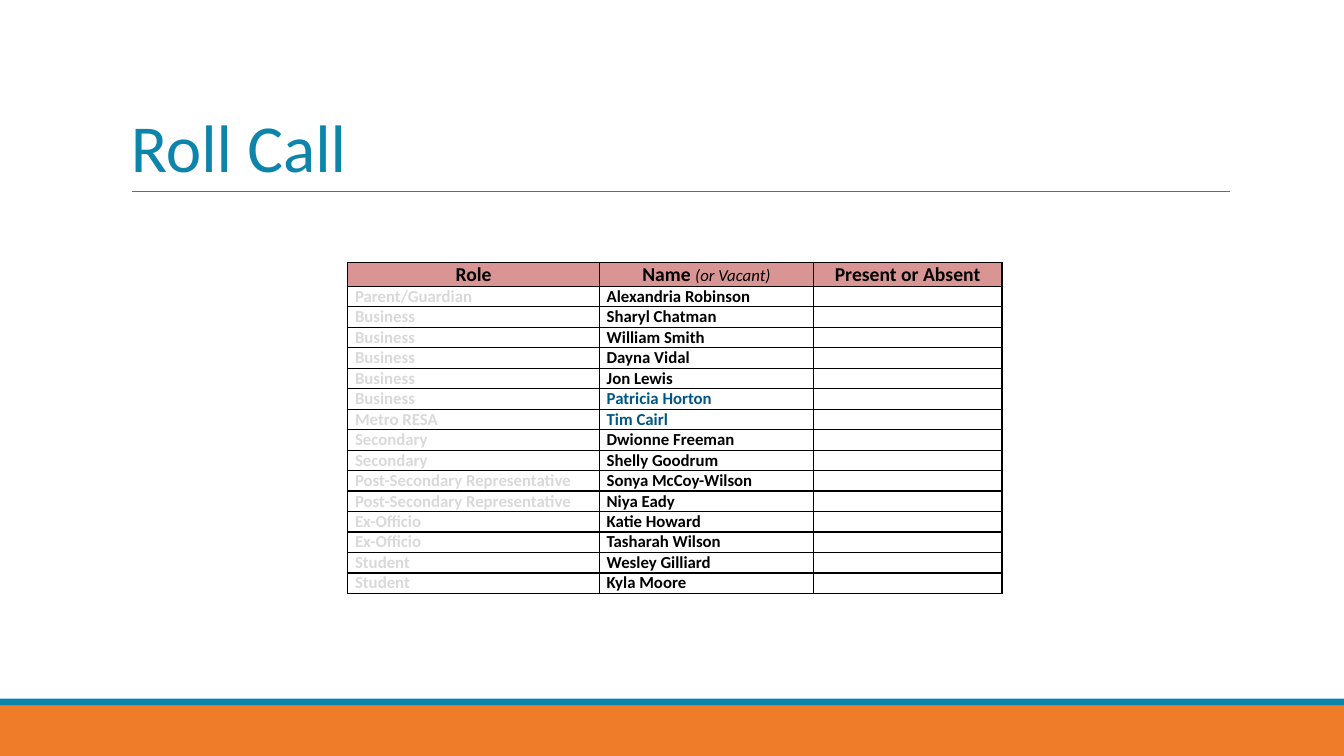
from lxml import etree
from pptx import Presentation
from pptx.dml.color import RGBColor
from pptx.enum import shapes, text
from pptx.oxml.ns import qn
from pptx.util import Pt

TITLE = "Roll Call"
HEADERS = [("Role", ""), ("Name ", "(or Vacant)"), ("Present or Absent", "")]
MEMBERS = [
    ("Parent/Guardian", "Alexandria Robinson"),
    ("Business", "Sharyl Chatman"),
    ("Business", "William Smith"),
    ("Business", "Dayna Vidal"),
    ("Business", "Jon Lewis"),
    ("Business", "Patricia Horton"),
    ("Metro RESA", "Tim Cairl"),
    ("Secondary", "Dwionne Freeman"),
    ("Secondary", "Shelly Goodrum"),
    ("Post-Secondary Representative", "Sonya McCoy-Wilson"),
    ("Post-Secondary Representative", "Niya Eady"),
    ("Ex-Officio", "Katie Howard"),
    ("Ex-Officio", "Tasharah Wilson"),
    ("Student", "Wesley Gilliard"),
    ("Student", "Kyla Moore"),
]
HIGHLIGHTED = {"Patricia Horton", "Tim Cairl"}
COLORS = {
    "orange": "EE7C29", "teal": "0D85AB", "rule": "6A6A6A", "header": "D99594",
    "black": "000000", "role": "D9D9D9", "highlight": "005685",
}
FONT = "Calibri"
SLIDE_W, SLIDE_H = 960, 540
BANDS = [("orange", 504, 36), ("teal", 499, 5)]
TABLE_X, TABLE_Y = 248.4, 187.4
COL_WIDTHS = [179.8, 152.8, 134.8]
HEADER_H, ROW_H = 17.1, 14.65


def rgb(name):
    return RGBColor.from_string(COLORS[name])


def style(font, size, color, bold=False):
    font.name, font.size, font.bold = FONT, Pt(size), bold
    font.color.rgb = rgb(color)


def add_borders(cell):
    tc_pr = cell._tc.get_or_add_tcPr()
    for i, side in enumerate(("lnL", "lnR", "lnT", "lnB")):
        ln = etree.Element(qn(f"a:{side}"), w=str(Pt(1)))
        fill = etree.SubElement(ln, qn("a:solidFill"))
        etree.SubElement(fill, qn("a:srgbClr"), val=COLORS["black"])
        tc_pr.insert(i, ln)


def fill_cell(cell, content, size, color):
    cell.margin_left = cell.margin_right = Pt(5.2)
    cell.margin_top = cell.margin_bottom = 0
    p = cell.text_frame.paragraphs[0]
    if content:
        p.add_run().text = content
        style(p.font, size, color, True)
    else:
        etree.SubElement(p._p, qn("a:endParaRPr"), sz=str(size * 100))
    return p


prs = Presentation()
prs.slide_width, prs.slide_height = Pt(SLIDE_W), Pt(SLIDE_H)
s = prs.slides.add_slide(prs.slide_layouts[6])

for color, top, height in BANDS:
    sp = s.shapes.add_shape(shapes.MSO_SHAPE.RECTANGLE, 0, Pt(top), Pt(SLIDE_W), Pt(height))
    sp.shadow.inherit = False
    sp.fill.solid()
    sp.fill.fore_color.rgb = rgb(color)
    sp.line.fill.background()

rule = s.shapes.add_connector(shapes.MSO_CONNECTOR.STRAIGHT, Pt(94.3), Pt(136.6), Pt(878.8), Pt(136.6))
rule.line.color.rgb = rgb("rule")
rule.line.width = Pt(0.75)
etree.SubElement(rule._element.spPr, qn("a:effectLst"))

tf = s.shapes.add_textbox(Pt(86.4), Pt(22.4), Pt(792), Pt(114.4)).text_frame
tf.word_wrap = True
tf.vertical_anchor = text.MSO_ANCHOR.BOTTOM
p = tf.paragraphs[0]
p.add_run().text = TITLE
p.line_spacing = 0.85
style(p.font, 48, "teal")

table = s.shapes.add_table(
    len(MEMBERS) + 1, len(HEADERS), Pt(TABLE_X), Pt(TABLE_Y),
    Pt(sum(COL_WIDTHS)), Pt(HEADER_H + ROW_H * len(MEMBERS)),
).table
for col, width in zip(table.columns, COL_WIDTHS):
    col.width = Pt(width)
for i, row in enumerate(table.rows):
    row.height = Pt(ROW_H if i else HEADER_H)

for c, (label, note) in enumerate(HEADERS):
    cell = table.cell(0, c)
    p = fill_cell(cell, label, 14, "black")
    p.alignment = text.PP_ALIGN.CENTER
    cell.vertical_anchor = text.MSO_ANCHOR.MIDDLE
    if note:
        r = p.add_run()
        r.text = note
        style(r.font, 12, "black")
        r.font.italic = True
    cell.fill.solid()
    cell.fill.fore_color.rgb = rgb("header")

for i, (role, name) in enumerate(MEMBERS, 1):
    name_color = "highlight" if name in HIGHLIGHTED else "black"
    for c, (content, color) in enumerate([(role, "role"), (name, name_color), ("", "black")]):
        cell = table.cell(i, c)
        fill_cell(cell, content, 12, color)
        cell.fill.background()

for cell in table.iter_cells():
    add_borders(cell)

prs.save("out.pptx")
